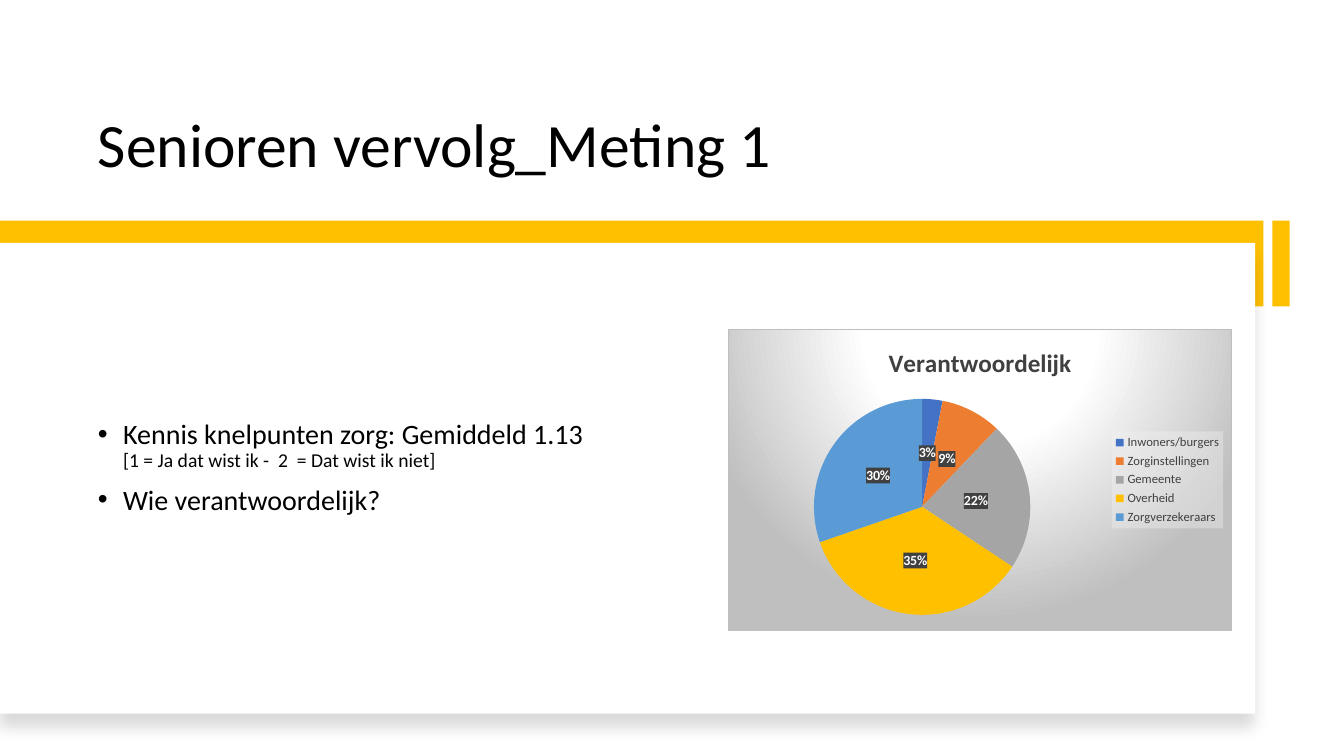
from lxml import etree
from pptx import Presentation, util as u
from pptx.chart import data as chart_data
from pptx.dml import color
from pptx.enum import chart as ch, shapes, text
from pptx.oxml import ns, parse_xml

COLORS = {"ink": "000000", "gold": "FFC000", "paper": "FFFFFF", "grey": "404040", "edge": "BFBFBF",
          "legend": "F2F2F2"}
SLICES = {
    "Inwoners/burgers": (3, "4472C4"),
    "Zorginstellingen": (9, "ED7D31"),
    "Gemeente": (22, "A5A5A5"),
    "Overheid": (35, "FFC000"),
    "Zorgverzekeraars": (30, "5B9BD5"),
}
RGB = color.RGBColor.from_string

deck = Presentation()
deck.slide_width, deck.slide_height = u.Inches(13.33), u.Inches(7.5)
slide = deck.slides.add_slide(deck.slide_layouts[1])


def area(*percents):
    sides = (deck.slide_width, deck.slide_height) * 2
    return [int(side * percent / 100) for side, percent in zip(sides, percents)]


def write(content, target, size, ink="ink", bold=False):
    if content:
        target = target.add_run()
        target.text = content
    target.font.name = "Calibri"
    target.font.size = u.Pt(size)
    target.font.bold = bold
    target.font.color.rgb = RGB(COLORS[ink])


heading, body = slide.placeholders
heading.left, heading.top, heading.width, heading.height = area(6.53, 5.6, 82.6, 18.93)
heading.text_frame.vertical_anchor = text.MSO_ANCHOR.BOTTOM
heading_line = heading.text_frame.paragraphs[0]
heading_line.alignment = text.PP_ALIGN.LEFT
heading_line.line_spacing = 0.9
write("Senioren vervolg_Meting 1", heading_line, 44)

for place, fill, turn in [
    ((0, 29.2, 94, 11.33), "gold", 0),
    ((0, 32.13, 93.4, 62.27), "paper", 0),
    ((92.12, 33.73, 6.38, 2.27), "gold", 90),
]:
    band = slide.shapes.add_shape(shapes.MSO_SHAPE.RECTANGLE, *area(*place))
    band.rotation = turn
    band.fill.solid()
    band.fill.fore_color.rgb = RGB(COLORS[fill])
    band.line.fill.background()
    band.shadow.inherit = False
    if fill == "paper":
        effects = band._element.spPr.find(ns.qn("a:effectLst"))
        cast = etree.SubElement(effects, ns.qn("a:outerShdw"), blurRad=str(u.Pt(11)),
                                dist=str(u.Pt(10)), dir="5400000", algn="t", rotWithShape="0")
        tint = etree.SubElement(cast, ns.qn("a:srgbClr"), val=COLORS["ink"])
        etree.SubElement(tint, ns.qn("a:alpha"), val="15000")
        band._element.addnext(body._element)

body.left, body.top, body.width, body.height = area(6.53, 37.87, 39.38, 53.07)
findings = body.text_frame
findings.vertical_anchor = text.MSO_ANCHOR.MIDDLE
findings.margin_bottom = area(0, 5.6)[1]
knowledge, responsible = findings.paragraphs[0], findings.add_paragraph()
for point, gap in ((knowledge, 0), (responsible, 10)):
    layout = point._p.get_or_add_pPr()
    layout.set("marL", str(u.Inches(0.25)))
    layout.set("indent", str(u.Inches(-0.25)))
    etree.SubElement(layout, ns.qn("a:buFont"), typeface="Arial")
    etree.SubElement(layout, ns.qn("a:buChar"), char="•")
    point.alignment = text.PP_ALIGN.LEFT
    point.line_spacing = 0.9
    point.space_before = u.Pt(gap)
write("Kennis knelpunten zorg: Gemiddeld 1.13", knowledge, 20)
knowledge.add_line_break()
write("[1 = Ja dat wist ik -  2  = Dat wist ik niet]", knowledge, 14)
write("Wie verantwoordelijk?", responsible, 20)

shares = chart_data.CategoryChartData()
shares.categories = list(SLICES)
shares.add_series("Verantwoordelijk", [value for value, _ in SLICES.values()])
pie = slide.shapes.add_chart(ch.XL_CHART_TYPE.PIE, *area(54.16, 43.47, 37.51, 40), shares).chart
write("", pie, 10)
pie.has_title = True
write("Verantwoordelijk", pie.chart_title.text_frame.paragraphs[0], 18, "grey", True)
pie.chart_title.include_in_layout = False
pie.has_legend = True
pie.legend.position = ch.XL_LEGEND_POSITION.RIGHT
pie.legend.include_in_layout = False
write("", pie.legend, 9, "grey")

plot = pie.plots[0]
plot.vary_by_categories = True
for index, (_, fill) in enumerate(SLICES.values()):
    wedge = plot.series[0].points[index].format
    wedge.fill.solid()
    wedge.fill.fore_color.rgb = RGB(fill)
    wedge.line.fill.background()
labels = plot.series[0].data_labels
labels.show_percentage = True
labels.show_value = False
labels.number_format = "0%"
labels.number_format_is_linked = False
labels.position = ch.XL_LABEL_POSITION.CENTER
write("", labels, 10, "paper", True)

stops = "".join(f'<a:gs pos="{pos}"><a:srgbClr val="{COLORS[fill]}"/></a:gs>'
                for pos, fill in ((0, "paper"), (39000, "paper"), (100000, "edge")))
backdrop = (f'<a:gradFill><a:gsLst>{stops}</a:gsLst><a:path path="circle">'
            '<a:fillToRect l="50000" t="-80000" r="50000" b="180000"/></a:path></a:gradFill>'
            f'<a:ln w="{u.Pt(0.75)}"><a:solidFill><a:srgbClr val="{COLORS["edge"]}"/></a:solidFill></a:ln>')
veil = '<a:solidFill><a:srgbClr val="{}"><a:alpha val="{}"/></a:srgbClr></a:solidFill>'
for part, look in [
    (pie._chartSpace, backdrop),
    (pie.legend._element, veil.format(COLORS["legend"], 39000)),
    (labels._element, veil.format(COLORS["grey"], 90000)),
]:
    part.find(ns.qn("c:txPr")).addprevious(
        parse_xml(f'<c:spPr {ns.nsdecls("c", "a")}>{look}</c:spPr>'))

plot_area = pie._chartSpace.chart.plotArea
for automatic in plot_area.findall(ns.qn("c:layout")):
    plot_area.remove(automatic)
frame = etree.Element(ns.qn("c:layout"))
manual = etree.SubElement(frame, ns.qn("c:manualLayout"))
for tag, value in (("layoutTarget", "inner"), ("xMode", "edge"), ("yMode", "edge"),
                   ("x", "0.17"), ("y", "0.23"), ("w", "0.43"), ("h", "0.72")):
    etree.SubElement(manual, ns.qn(f"c:{tag}"), val=value)
plot_area.insert(0, frame)

deck.save("out.pptx")
